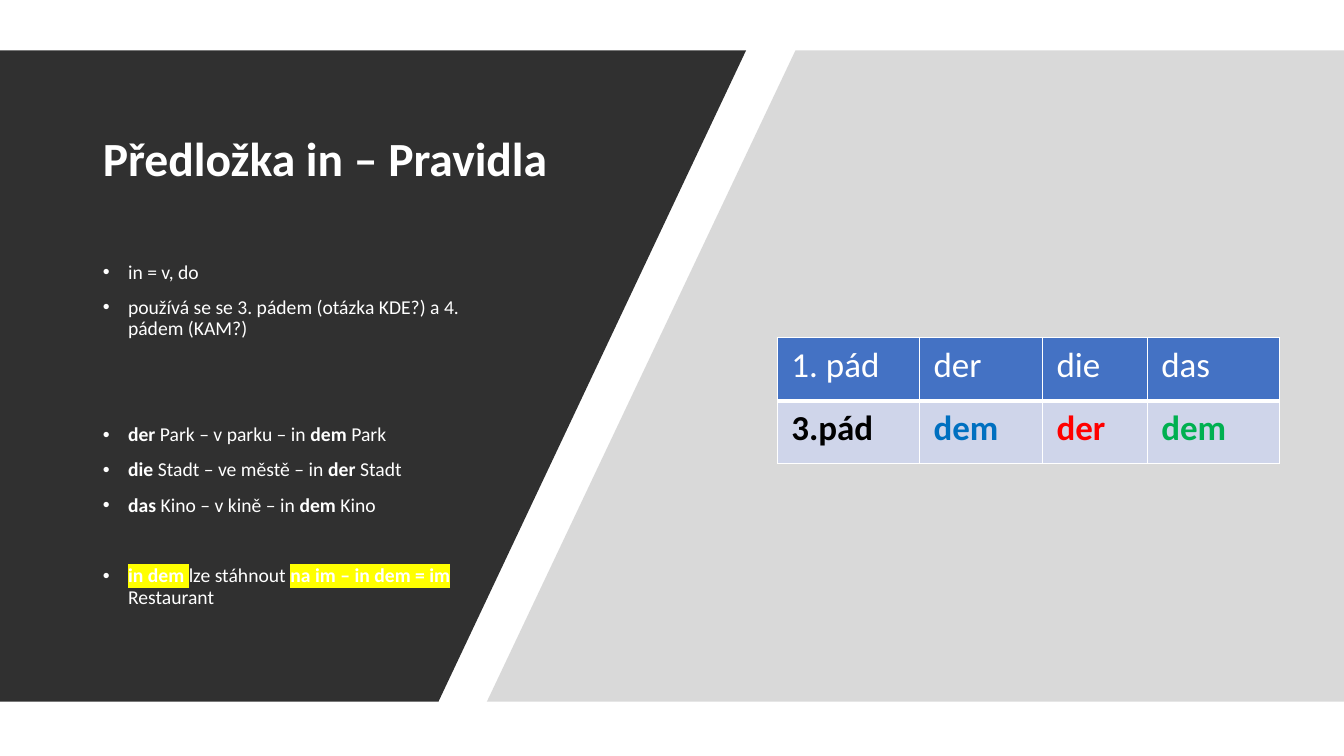
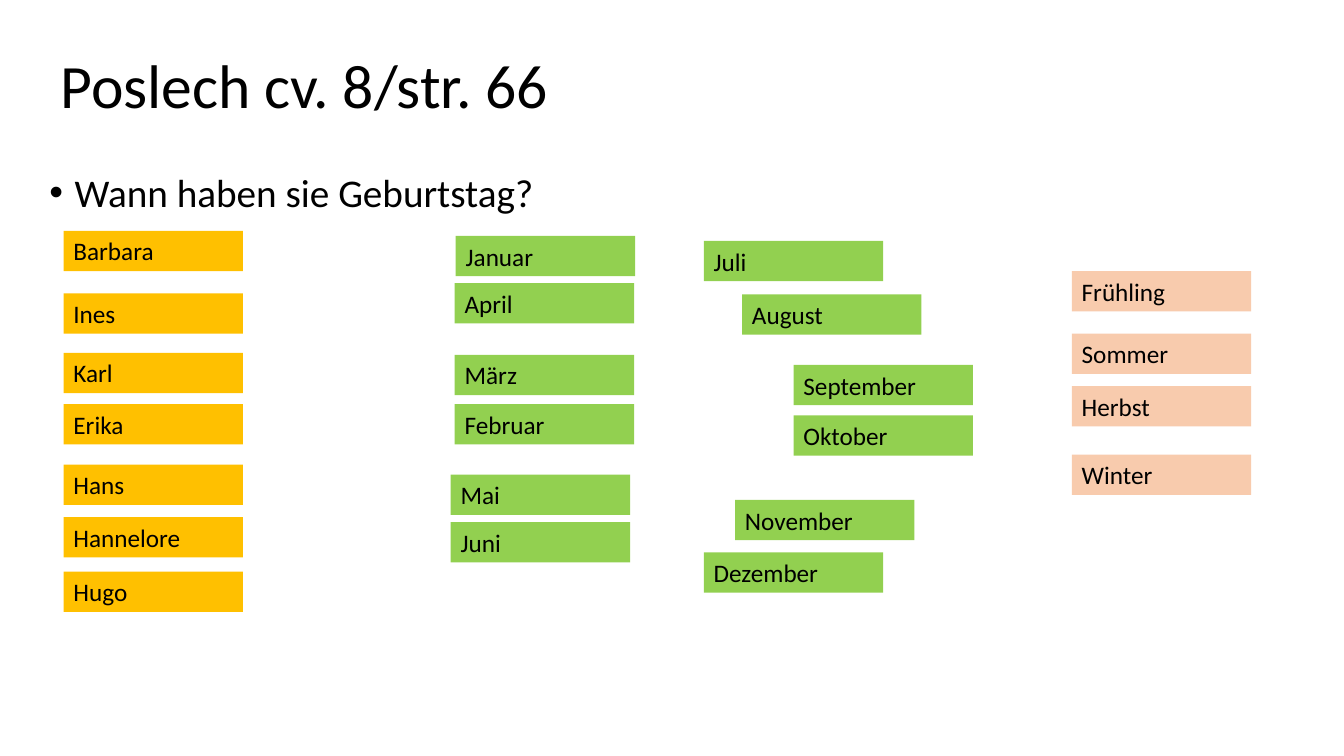
"""Build two German lesson slides: the preposition "in" and a listening exercise."""
from dataclasses import dataclass

from lxml import etree
from pptx import Presentation
from pptx.dml.color import RGBColor
from pptx.enum.shapes import MSO_SHAPE
from pptx.enum.text import MSO_ANCHOR, MSO_AUTO_SIZE, PP_ALIGN
from pptx.oxml.ns import qn
from pptx.util import Inches, Pt

RECT = MSO_SHAPE.RECTANGLE
LEFT = PP_ALIGN.LEFT
MIDDLE, TOP = MSO_ANCHOR.MIDDLE, MSO_ANCHOR.TOP
NO_FIT, GROW = MSO_AUTO_SIZE.NONE, MSO_AUTO_SIZE.SHAPE_TO_FIT_TEXT

FONT = "Calibri"
SLIDE_W, SLIDE_H = 13.33, 7.5
CHIP_W, CHIP_H = 1.78, 0.4
BAND_TOP, BAND_BOTTOM = 0.5, 6.96
LINE_SPACING, PARA_GAP, BLANK_LINE = 0.9, 10, 25.4
COLORS = {
    "white": "FFFFFF", "black": "000000", "dark": "303030", "gray": "B4B4B4",
    "header": "4472C4", "row": "CFD5EA", "blue": "0070C0", "red": "FF0000",
    "green": "00B050", "yellow": "FFFF00", "name": "FFC000",
    "month": "92D050", "season": "F8CBAD",
}


@dataclass(frozen=True)
class Span:
    text: str
    bold: bool = False
    highlight: str | None = None


@dataclass(frozen=True)
class Bullet:
    spans: tuple[Span, ...]
    blank_lines: int = 0


@dataclass(frozen=True)
class Chip:
    text: str
    left: float
    top: float
    color: str


@dataclass(frozen=True)
class Box:
    left: float
    top: float
    width: float
    height: float

    def lengths(self) -> tuple:
        return tuple(Inches(v) for v in (self.left, self.top, self.width, self.height))


def example(article: str, noun: str, czech: str, dative: str, blank_lines: int = 0) -> Bullet:
    return Bullet((Span(article, True), Span(f" {noun} – {czech} – in "),
                   Span(dative, True), Span(f" {noun}")), blank_lines)


RULES = (
    Bullet((Span("in = v, do"),)),
    Bullet((Span("používá se se 3. pádem (otázka KDE?) a 4. pádem (KAM?)"),)),
    example("der", "Park", "v parku", "dem", blank_lines=2),
    example("die", "Stadt", "ve městě", "der"),
    example("das", "Kino", "v kině", "dem"),
    Bullet((Span("in dem ", True, "yellow"), Span("lze stáhnout "),
            Span("na im – in dem = im ", True, "yellow"), Span("Restaurant")), 1),
)
CASES = (("1. pád", "der", "die", "das"), ("3.pád", "dem", "der", "dem"))
CASE_COLORS = (("white",) * 4, ("black", "blue", "red", "green"))
CASE_WIDTHS = (1.41, 1.22, 1.04, 1.31)

NAMES = (("Barbara", 2.29), ("Ines", 2.91), ("Karl", 3.5), ("Erika", 4.01),
         ("Hans", 4.61), ("Hannelore", 5.13), ("Hugo", 5.67))
MONTHS = (("Januar", 4.52, 2.34), ("April", 4.51, 2.81), ("März", 4.51, 3.52),
          ("Februar", 4.51, 4.01), ("Mai", 4.47, 4.71), ("Juni", 4.47, 5.18),
          ("Dezember", 6.98, 5.48), ("November", 7.29, 4.96), ("Oktober", 7.87, 4.12),
          ("September", 7.87, 3.62), ("August", 7.36, 2.92), ("Juli", 6.98, 2.39))
SEASONS = (("Frühling", 2.69), ("Sommer", 3.31), ("Herbst", 3.83), ("Winter", 4.51))
CHIPS = (
    *(Chip(text, 0.63, top, "name") for text, top in NAMES),
    *(Chip(text, left, top, "month") for text, left, top in MONTHS),
    *(Chip(text, 10.63, top, "season") for text, top in SEASONS),
)


def rgb(name: str) -> RGBColor:
    return RGBColor.from_string(COLORS[name])


def paint(sp, color: str, alpha: int = 100) -> None:
    sp.shadow.inherit = False
    sp.fill.solid()
    sp.fill.fore_color.rgb = rgb(color)
    sp.line.fill.background()
    if alpha < 100:
        clr = sp._element.spPr.find(qn("a:solidFill"))[0]
        etree.SubElement(clr, qn("a:alpha")).set("val", str(alpha * 1000))


def add_text(p, text: str, *, size: float, color: str = "black",
             bold: bool = False, highlight: str | None = None) -> None:
    r = p.add_run()
    r.text = text
    r.font.name, r.font.size, r.font.bold = FONT, Pt(size), bold
    r.font.color.rgb = rgb(color)
    if highlight:
        mark = etree.Element(qn("a:highlight"))
        etree.SubElement(mark, qn("a:srgbClr")).set("val", COLORS[highlight])
        r._r.rPr.find(qn("a:solidFill")).addnext(mark)


def place(sp, box: Box, anchor):
    sp.left, sp.top, sp.width, sp.height = box.lengths()
    tf = sp.text_frame
    tf.word_wrap, tf.auto_size, tf.vertical_anchor = True, NO_FIT, anchor
    return tf


def set_title(s, text: str, box: Box, **fmt) -> None:
    p = place(s.shapes.title, box, MIDDLE).paragraphs[0]
    p.alignment, p.line_spacing = LEFT, LINE_SPACING
    add_text(p, text, **fmt)


def set_body(s, bullets: tuple[Bullet, ...], box: Box, **fmt) -> None:
    tf = place(s.placeholders[1], box, TOP)
    for i, bullet in enumerate(bullets):
        p = tf.add_paragraph() if i else tf.paragraphs[0]
        p.line_spacing = LINE_SPACING
        p.space_before = Pt(PARA_GAP + bullet.blank_lines * BLANK_LINE)
        pPr = p._p.get_or_add_pPr()
        pPr.set("marL", str(Inches(0.25)))
        pPr.set("indent", str(-Inches(0.25)))
        for span in bullet.spans:
            add_text(p, span.text, bold=span.bold, highlight=span.highlight, **fmt)


def add_panel(s, points: tuple, color: str, alpha: int = 100) -> None:
    corners = [(Inches(x), Inches(y)) for x, y in points]
    builder = s.shapes.build_freeform(*corners[0])
    builder.add_line_segments(corners[1:], close=True)
    paint(builder.convert_to_shape(), color, alpha)


def add_backdrop(s) -> None:
    s.background.fill.solid()
    s.background.fill.fore_color.rgb = rgb("black")
    paint(s.shapes.add_shape(RECT, *Box(0, 0, SLIDE_W, SLIDE_H).lengths()), "white")
    add_panel(s, ((7.89, BAND_TOP), (SLIDE_W, BAND_TOP),
                  (SLIDE_W, BAND_BOTTOM), (4.83, BAND_BOTTOM)), "gray", 50)
    add_panel(s, ((0, BAND_TOP), (7.4, BAND_TOP),
                  (4.35, BAND_BOTTOM), (0, BAND_BOTTOM)), "dark")
    for sp in list(s.placeholders):
        s.shapes._spTree.append(sp._element)


def set_borders(cell, bottom: float) -> None:
    tcPr = cell._tc.get_or_add_tcPr()
    for i, (side, width) in enumerate((("L", 1), ("R", 1), ("T", 1), ("B", bottom))):
        ln = etree.Element(qn(f"a:ln{side}"), w=str(Pt(width)))
        fill = etree.SubElement(ln, qn("a:solidFill"))
        etree.SubElement(fill, qn("a:srgbClr")).set("val", COLORS["white"])
        tcPr.insert(i, ln)


def add_case_table(s) -> None:
    box = Box(7.71, 3.35, sum(CASE_WIDTHS), 1.25)
    table = s.shapes.add_table(len(CASES), len(CASE_WIDTHS), *box.lengths()).table
    for col, width in zip(table.columns, CASE_WIDTHS):
        col.width = Inches(width)
    for i, (texts, colors) in enumerate(zip(CASES, CASE_COLORS)):
        for j, (text, color) in enumerate(zip(texts, colors)):
            cell = table.cell(i, j)
            cell.margin_left = cell.margin_right = Inches(0.14)
            cell.margin_top = cell.margin_bottom = Inches(0.07)
            cell.fill.solid()
            cell.fill.fore_color.rgb = rgb("row" if i else "header")
            set_borders(cell, bottom=1 if i else 3)
            add_text(cell.text_frame.paragraphs[0], text, size=25, color=color, bold=i > 0)


def add_chip(s, chip: Chip) -> None:
    box = Box(chip.left, chip.top, CHIP_W, CHIP_H)
    sp = s.shapes.add_shape(RECT, *box.lengths())
    paint(sp, chip.color)
    tf = place(sp, box, TOP)
    tf.auto_size = GROW
    p = tf.paragraphs[0]
    p.alignment = LEFT
    add_text(p, chip.text, size=18)


def build_rules(s) -> None:
    add_backdrop(s)
    set_title(s, "Předložka in – Pravidla", Box(0.92, 1, 4.68, 1.2),
              size=34, color="white", bold=True)
    set_body(s, RULES, Box(0.92, 2.55, 3.85, 3.66), size=14, color="white")
    add_case_table(s)


def build_listening(s) -> None:
    set_title(s, "Poslech cv. 8/str. 66", Box(0.5, 0.15, 11.5, 1.45), size=44)
    set_body(s, (Bullet((Span("Wann haben sie Geburtstag?"),)),),
             Box(0.39, 1.67, 12.43, 5.08), size=28)
    for chip in CHIPS:
        add_chip(s, chip)


def main() -> None:
    prs = Presentation()
    prs.slide_width, prs.slide_height = Inches(SLIDE_W), Inches(SLIDE_H)
    for build in (build_rules, build_listening):
        build(prs.slides.add_slide(prs.slide_layouts[1]))
    prs.save("out.pptx")


if __name__ == "__main__":
    main()
